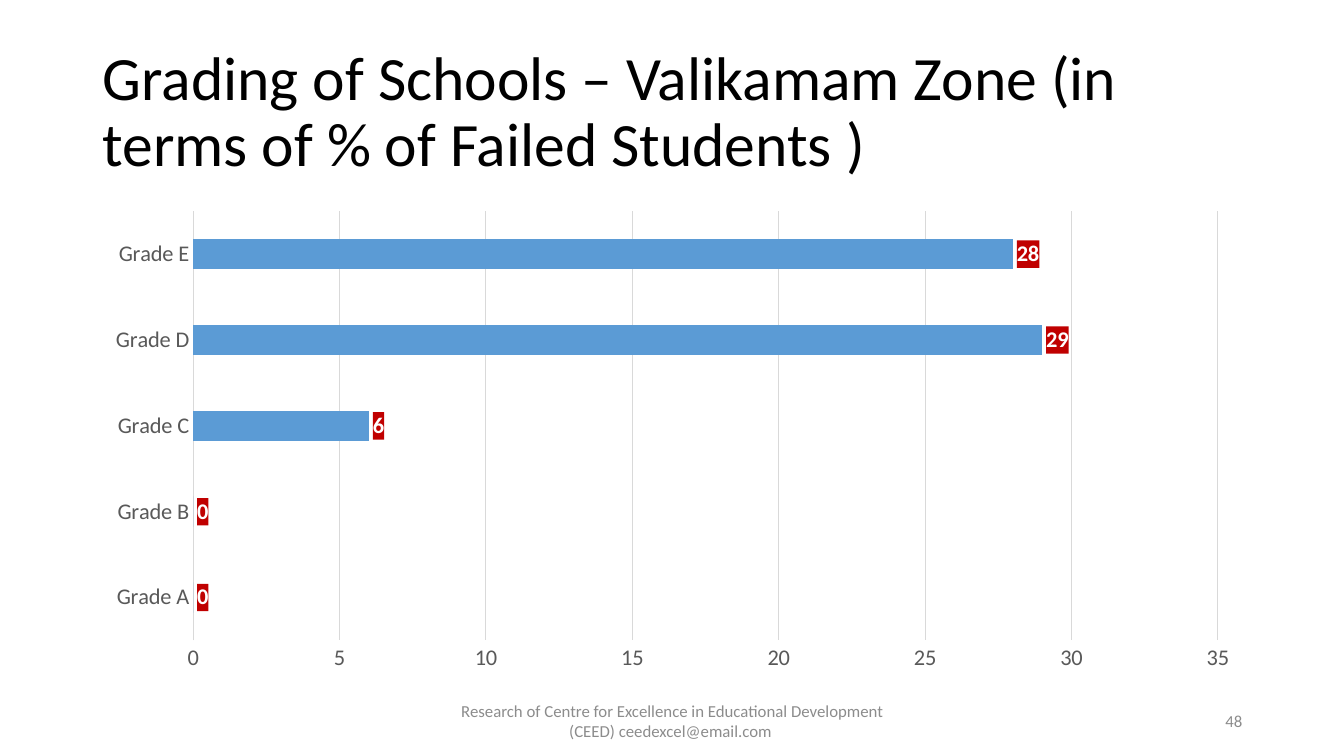
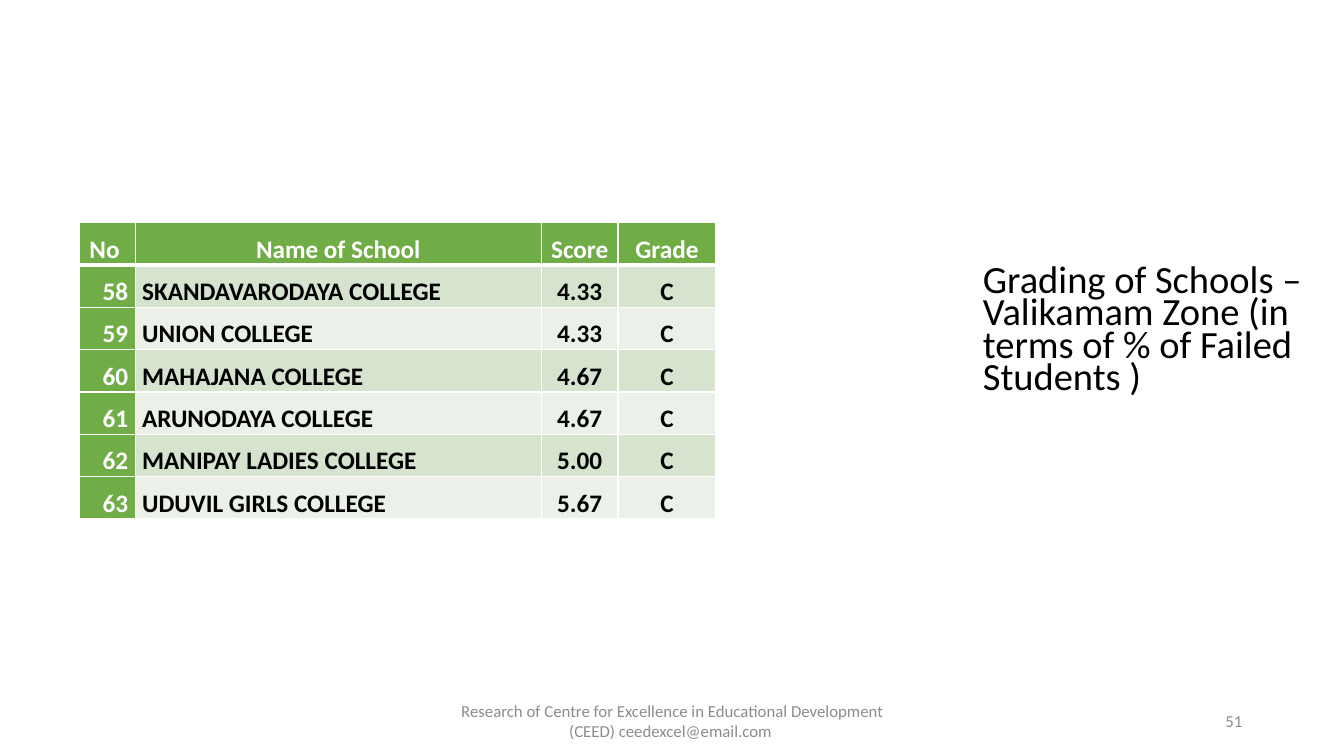
from dataclasses import dataclass
from typing import NamedTuple

from lxml import etree
from pptx import Presentation
from pptx import util as u
from pptx.chart import data as chart_data
from pptx.dml.color import RGBColor
from pptx.enum import chart as ch
from pptx.enum import text
from pptx.oxml import ns

EMU_PER_PX = 9144  # 100 px to the inch
ALIGN = text.PP_ALIGN


@dataclass(frozen=True)
class Theme:
    font: str = "Calibri"
    ink: str = "000000"
    paper: str = "FFFFFF"
    footer_ink: str = "8C8C8C"
    axis_ink: str = "595959"
    grid: str = "D9D9D9"
    bar: str = "5B9BD5"
    label_fill: str = "C00000"
    header_fill: str = "70AD47"
    bands: tuple[str, str] = ("D5E3CF", "EBF1E9")
    title_size: float = 44
    side_title_size: float = 27.5
    chart_size: float = 16
    table_size: float = 18
    footer_size: float = 12


class Box(NamedTuple):
    left: int
    top: int
    width: int
    height: int


class Style(NamedTuple):
    size: float
    color: str
    align: ALIGN = ALIGN.LEFT
    spacing: float = 1.0
    bold: bool = False


class Column(NamedTuple):
    heading: str
    width: int
    align: ALIGN


class School(NamedTuple):
    number: str
    name: str
    score: str
    grade: str


THEME = Theme()
SLIDE_WIDTH, SLIDE_HEIGHT = 1333, 750
TITLE = "Grading of Schools – Valikamam Zone (in terms of % of Failed Students )"
FOOTER = (
    "Research of Centre for Excellence in Educational Development "
    "(CEED) ceedexcel@email.com "
)
GRADE_COUNTS = {"Grade A": 0, "Grade B": 0, "Grade C": 6, "Grade D": 29, "Grade E": 28}
COLUMNS = (
    Column("No ", 55, ALIGN.RIGHT),
    Column("Name of School", 403, ALIGN.LEFT),
    Column("Score", 76, ALIGN.CENTER),
    Column("Grade", 97, ALIGN.CENTER),
)
SCHOOLS = (
    School("58", "SKANDAVARODAYA COLLEGE", "4.33", "C"),
    School("59", "UNION COLLEGE", "4.33", "C"),
    School("60", "MAHAJANA COLLEGE", "4.67", "C"),
    School("61", "ARUNODAYA COLLEGE", "4.67", "C"),
    School("62", "MANIPAY LADIES COLLEGE", "5.00", "C"),
    School("63", "UDUVIL GIRLS COLLEGE", "5.67", "C"),
)
ROW_HEIGHT = 42


def px(length: int) -> u.Emu:
    return u.Emu(length * EMU_PER_PX)


def place(box: Box) -> tuple[u.Emu, ...]:
    return tuple(px(length) for length in box)


def rgb(color: str) -> RGBColor:
    return RGBColor.from_string(color)


def style_font(font, size: float, color: str, bold: bool = False) -> None:
    font.name, font.size, font.bold = THEME.font, u.Pt(size), bold
    font.color.rgb = rgb(color)


def write(frame, words: str, style: Style) -> None:
    paragraph = frame.paragraphs[0]
    paragraph.alignment = style.align
    paragraph.line_spacing = style.spacing
    run = paragraph.add_run()
    run.text = words
    style_font(run.font, style.size, style.color, style.bold)


def add_text(slide, box: Box, words: str, style: Style) -> None:
    frame = slide.shapes.add_textbox(*place(box)).text_frame
    frame.word_wrap = True
    frame.vertical_anchor = text.MSO_ANCHOR.MIDDLE
    write(frame, words, style)


def add_slide(prs, number: int):
    """Add a blank slide carrying the shared footer and its page number."""
    slide = prs.slides.add_slide(prs.slide_layouts[6])
    size, color = THEME.footer_size, THEME.footer_ink
    add_text(slide, Box(442, 695, 450, 40), FOOTER, Style(size, color, ALIGN.CENTER))
    add_text(slide, Box(942, 695, 300, 40), str(number), Style(size, color, ALIGN.RIGHT))
    return slide


def style_line(line, color: str) -> None:
    line.color.rgb = rgb(color)
    line.width = u.Pt(0.75)


def style_axis(axis) -> None:
    axis.major_tick_mark = axis.minor_tick_mark = ch.XL_TICK_MARK.NONE
    style_font(axis.tick_labels.font, THEME.chart_size, THEME.axis_ink)


def fill_labels(labels, color: str) -> None:
    """Give the data labels a solid background; spPr must precede txPr."""
    properties = etree.Element(ns.qn("c:spPr"))
    fill = etree.SubElement(properties, ns.qn("a:solidFill"))
    etree.SubElement(fill, ns.qn("a:srgbClr"), val=color)
    labels._element.find(ns.qn("c:txPr")).addprevious(properties)


def add_grade_chart(slide, box: Box) -> None:
    grades = chart_data.CategoryChartData()
    grades.categories = list(GRADE_COUNTS)
    grades.add_series("Series 1", list(GRADE_COUNTS.values()))
    chart = slide.shapes.add_chart(
        ch.XL_CHART_TYPE.BAR_CLUSTERED, *place(box), grades
    ).chart
    chart.has_legend = chart.has_title = False
    style_font(chart.font, THEME.chart_size, THEME.ink)

    style_axis(chart.category_axis)
    style_line(chart.category_axis.format.line, THEME.grid)
    counts = chart.value_axis
    style_axis(counts)
    counts.minimum_scale, counts.maximum_scale, counts.major_unit = 0, 35, 5
    counts.format.line.fill.background()
    counts.has_major_gridlines = True
    style_line(counts.major_gridlines.format.line, THEME.grid)

    plot = chart.plots[0]
    plot.gap_width = 182
    plot.vary_by_categories = False
    bars = plot.series[0]
    bars.format.fill.solid()
    bars.format.fill.fore_color.rgb = rgb(THEME.bar)
    labels = bars.data_labels
    labels.show_value = True
    labels.position = ch.XL_LABEL_POSITION.OUTSIDE_END
    style_font(labels.font, THEME.chart_size, THEME.paper, bold=True)
    fill_labels(labels, THEME.label_fill)


def set_borders(cell, top: int = 1, bottom: int = 1) -> None:
    """Draw the cell's edges, in points; call before the fill is set."""
    properties = cell._tc.get_or_add_tcPr()
    for edge, width in (("L", 1), ("R", 1), ("T", top), ("B", bottom)):
        line = etree.SubElement(properties, ns.qn(f"a:ln{edge}"), w=str(u.Pt(width)))
        fill = etree.SubElement(line, ns.qn("a:solidFill"))
        etree.SubElement(fill, ns.qn("a:srgbClr"), val=THEME.paper)


def fill_cell(cell, words: str, align: ALIGN, color: str, ink: str) -> None:
    cell.margin_left = cell.margin_right = px(7)
    cell.margin_top = cell.margin_bottom = 0
    cell.vertical_anchor = text.MSO_ANCHOR.BOTTOM
    cell.fill.solid()
    cell.fill.fore_color.rgb = rgb(color)
    write(cell.text_frame, words, Style(THEME.table_size, ink, align, 1.07, True))


def add_school_table(slide, left: int, top: int) -> None:
    row_count = len(SCHOOLS) + 1
    width = sum(column.width for column in COLUMNS)
    box = Box(left, top, width, ROW_HEIGHT * row_count)
    table = slide.shapes.add_table(row_count, len(COLUMNS), *place(box)).table
    for row in table.rows:
        row.height = px(ROW_HEIGHT)
    for index, column in enumerate(COLUMNS):
        table.columns[index].width = px(column.width)
        header = table.cell(0, index)
        set_borders(header, bottom=3)
        fill_cell(header, column.heading, ALIGN.CENTER, THEME.header_fill, THEME.paper)
        for row, school in enumerate(SCHOOLS, start=1):
            cell = table.cell(row, index)
            set_borders(cell, top=3 if row == 1 else 1)
            if index == 0:
                color, ink = THEME.header_fill, THEME.paper
            else:
                color, ink = THEME.bands[(row - 1) % 2], THEME.ink
            fill_cell(cell, school[index], column.align, color, ink)


def main() -> None:
    prs = Presentation()
    prs.slide_width, prs.slide_height = px(SLIDE_WIDTH), px(SLIDE_HEIGHT)

    overview = add_slide(prs, 48)
    title_style = Style(THEME.title_size, THEME.ink, spacing=0.9)
    add_text(overview, Box(92, 40, 1150, 145), TITLE, title_style)
    add_grade_chart(overview, Box(92, 200, 1150, 476))

    school_list = add_slide(prs, 51)
    side_style = Style(THEME.side_title_size, THEME.ink, spacing=0.7)
    add_text(school_list, Box(965, 257, 351, 145), TITLE, side_style)
    add_school_table(school_list, 79, 221)

    prs.save("out.pptx")


if __name__ == "__main__":
    main()
